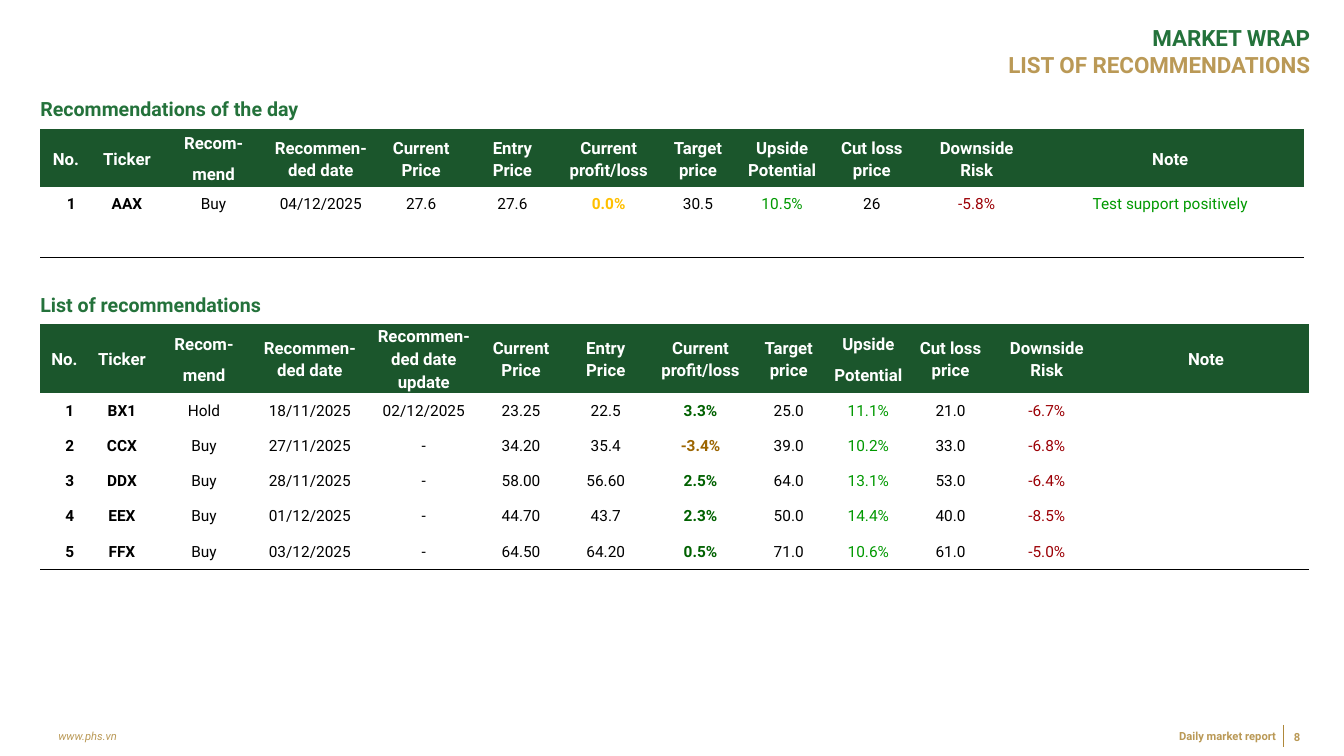
import lxml.etree
import pptx
import pptx.dml.color
import pptx.enum.shapes
import pptx.enum.text
import pptx.oxml
import pptx.oxml.ns
import pptx.util

Pt = pptx.util.Pt
ALIGN = pptx.enum.text.PP_ALIGN
ANCHOR = pptx.enum.text.MSO_ANCHOR
FONT = "Roboto"
NO_STYLE = "{2D5ABB26-0587-4C30-8999-92F81FD0307C}"
HEADER_INSET = 4.8
NUMBER_INDENT = 7.6
DATA_ROW = 25.2

COLORS = {
    "heading": "24723B",
    "gold": "BA9956",
    "rule": "AF883A",
    "header": "1B562C",
    "white": "FFFFFF",
    "text": "000000",
    "upside": "009900",
    "downside": "9C0006",
    "gain": "006100",
    "loss": "9C6500",
    "flat": "FFC000",
}

DAY_COLUMNS = [
    ("No.", 36.7), ("Ticker", 50.4), ("Recom-\nmend", 73.4),
    ("Recommen-ded date", 79.9), ("Current Price", 63.4),
    ("Entry Price", 67), ("Current profit/loss", 70.6),
    ("Target price", 56.9), ("Upside Potential", 63.4),
    ("Cut loss price", 64.8), ("Downside Risk", 85), ("Note", 191.5),
]
DAY_ROWS = [
    ["1", "AAX", "Buy", "04/12/2025", "27.6", "27.6", "0.0%", "30.5",
     "10.5%", "26", "-5.8%", "Test support positively"],
    [""] * len(DAY_COLUMNS),
]

LIST_COLUMNS = [
    ("No.", 34.6), ("Ticker", 47.5), ("Recom-\nmend", 69.8),
    ("Recommen-ded date", 81.4), ("Recommen-ded date update", 81.4),
    ("Current Price", 57.6), ("Entry Price", 63.4),
    ("Current profit/loss", 72), ("Target price", 54),
    ("Upside\nPotential", 59.8), ("Cut loss price", 57.6),
    ("Downside Risk", 79.9), ("Note", 147.6),
]
LIST_ROWS = [
    ["1", "BX1", "Hold", "18/11/2025", "02/12/2025", "23.25", "22.5",
     "3.3%", "25.0", "11.1%", "21.0", "-6.7%", ""],
    ["2", "CCX", "Buy", "27/11/2025", "-", "34.20", "35.4",
     "-3.4%", "39.0", "10.2%", "33.0", "-6.8%", ""],
    ["3", "DDX", "Buy", "28/11/2025", "-", "58.00", "56.60",
     "2.5%", "64.0", "13.1%", "53.0", "-6.4%", ""],
    ["4", "EEX", "Buy", "01/12/2025", "-", "44.70", "43.7",
     "2.3%", "50.0", "14.4%", "40.0", "-8.5%", ""],
    ["5", "FFX", "Buy", "03/12/2025", "-", "64.50", "64.20",
     "0.5%", "71.0", "10.6%", "61.0", "-5.0%", ""],
]


def rgb(name):
    return pptx.dml.color.RGBColor.from_string(COLORS[name])


def style_font(paragraph, size, color, bold=False, italic=False):
    font = paragraph.font
    font.name, font.size = FONT, Pt(size)
    font.bold, font.italic = bold, italic
    font.color.rgb = rgb(color)


def add_text(slide, text, box, size, color, align=ALIGN.LEFT, bold=True,
             italic=False, insets=(0, 0, 0, 0), anchor=ANCHOR.TOP, spacing=1.0):
    frame = slide.shapes.add_textbox(*map(Pt, box)).text_frame
    frame.word_wrap = True
    frame.vertical_anchor = anchor
    (frame.margin_left, frame.margin_top,
     frame.margin_right, frame.margin_bottom) = map(Pt, insets)
    paragraph = frame.paragraphs[0]
    paragraph.text = text
    paragraph.alignment = align
    paragraph.line_spacing = spacing
    style_font(paragraph, size, color, bold, italic)


def add_footer_rule(slide, x, top, bottom):
    rule = slide.shapes.add_connector(
        pptx.enum.shapes.MSO_CONNECTOR.STRAIGHT,
        Pt(x), Pt(top), Pt(x), Pt(bottom))
    rule.line.color.rgb = rgb("rule")
    rule.line.width = Pt(0.5)
    lxml.etree.SubElement(rule._element.spPr, pptx.oxml.ns.qn("a:effectLst"))


def draw_bottom_border(cell):
    border = pptx.oxml.parse_xml(
        f'<a:lnB {pptx.oxml.ns.nsdecls("a")} w="{Pt(1)}"><a:solidFill>'
        f'<a:srgbClr val="{COLORS["text"]}"/></a:solidFill></a:lnB>')
    cell._tc.get_or_add_tcPr().insert(0, border)


def value_style(title, value):
    """Return the colour name and weight of a value under a column title."""
    if "profit/loss" in title and value:
        change = float(value.rstrip("%"))
        return "gain" if change > 0 else "loss" if change < 0 else "flat", True
    if title.startswith("Upside") or title == "Note":
        return "upside", False
    if title.startswith("Downside"):
        return "downside", False
    return "text", title in ("No.", "Ticker")


def fill_cell(cell, text, fill, size, color, bold, left=0, right=0, spacing=1.0):
    cell.fill.solid()
    cell.fill.fore_color.rgb = rgb(fill)
    cell.vertical_anchor = ANCHOR.MIDDLE
    cell.margin_left, cell.margin_right = Pt(left), Pt(right)
    cell.margin_top = cell.margin_bottom = Pt(0)
    cell.text = text
    for index, paragraph in enumerate(cell.text_frame.paragraphs):
        paragraph.alignment = ALIGN.CENTER
        paragraph.line_spacing = spacing
        if index:
            paragraph.space_before = Pt(6)
        style_font(paragraph, size, color, bold)


def add_recommendations(slide, top, header_height, columns, rows):
    heights = [header_height] + [DATA_ROW] * len(rows)
    table = slide.shapes.add_table(
        len(heights), len(columns), Pt(28.8), Pt(top),
        Pt(sum(width for _, width in columns)), Pt(sum(heights))).table
    table.horz_banding = table.first_row = False
    table._tbl.tblPr.find(pptx.oxml.ns.qn("a:tableStyleId")).text = NO_STYLE
    for row, height in zip(table.rows, heights):
        row.height = Pt(height)
    for c, (title, width) in enumerate(columns):
        table.columns[c].width = Pt(width)
        fill_cell(table.cell(0, c), title, "header", 12, "white", True,
                  HEADER_INSET, HEADER_INSET, 1.15)
        indent = NUMBER_INDENT if title == "No." else 0
        for r, values in enumerate(rows, 1):
            color, bold = value_style(title, values[c])
            fill_cell(table.cell(r, c), values[c], "white", 11, color, bold, indent)
        draw_bottom_border(table.cell(len(rows), c))


def main():
    deck = pptx.Presentation()
    deck.slide_width, deck.slide_height = Pt(960), Pt(540)
    slide = deck.slides.add_slide(deck.slide_layouts[6])

    add_text(slide, "MARKET WRAP", (631.4, 17.3, 304.6, 19.4), 16, "heading",
             ALIGN.RIGHT)
    add_text(slide, "LIST OF RECOMMENDATIONS", (142.6, 36.7, 793.4, 23), 16,
             "gold", ALIGN.RIGHT, insets=(7.2, 3.6, 0, 3.6), spacing=0.8)

    add_text(slide, "Recommendations of the day", (28.8, 67, 482.4, 18), 14,
             "heading", spacing=1.15)
    add_recommendations(slide, 92.2, 41.4, DAY_COLUMNS, DAY_ROWS)
    add_text(slide, "List of recommendations", (28.8, 206.6, 482.4, 18), 14,
             "heading", spacing=1.15)
    add_recommendations(slide, 231.1, 49.2, LIST_COLUMNS, LIST_ROWS)

    footer = {"size": 8, "color": "gold", "insets": (7.2, 3.6, 7.2, 3.6)}
    add_text(slide, "www.phs.vn", (34.6, 511.2, 216, 28.8), bold=False,
             italic=True, anchor=ANCHOR.MIDDLE, **footer)
    add_text(slide, "Daily market report", (820, 517.7, 98.7, 17.3),
             align=ALIGN.RIGHT, **footer)
    add_footer_rule(slide, 916.6, 517.7, 533.5)
    add_text(slide, "8", (720, 511.9, 216, 28.8), align=ALIGN.RIGHT,
             anchor=ANCHOR.MIDDLE, **footer)

    deck.save("out.pptx")


if __name__ == "__main__":
    main()
